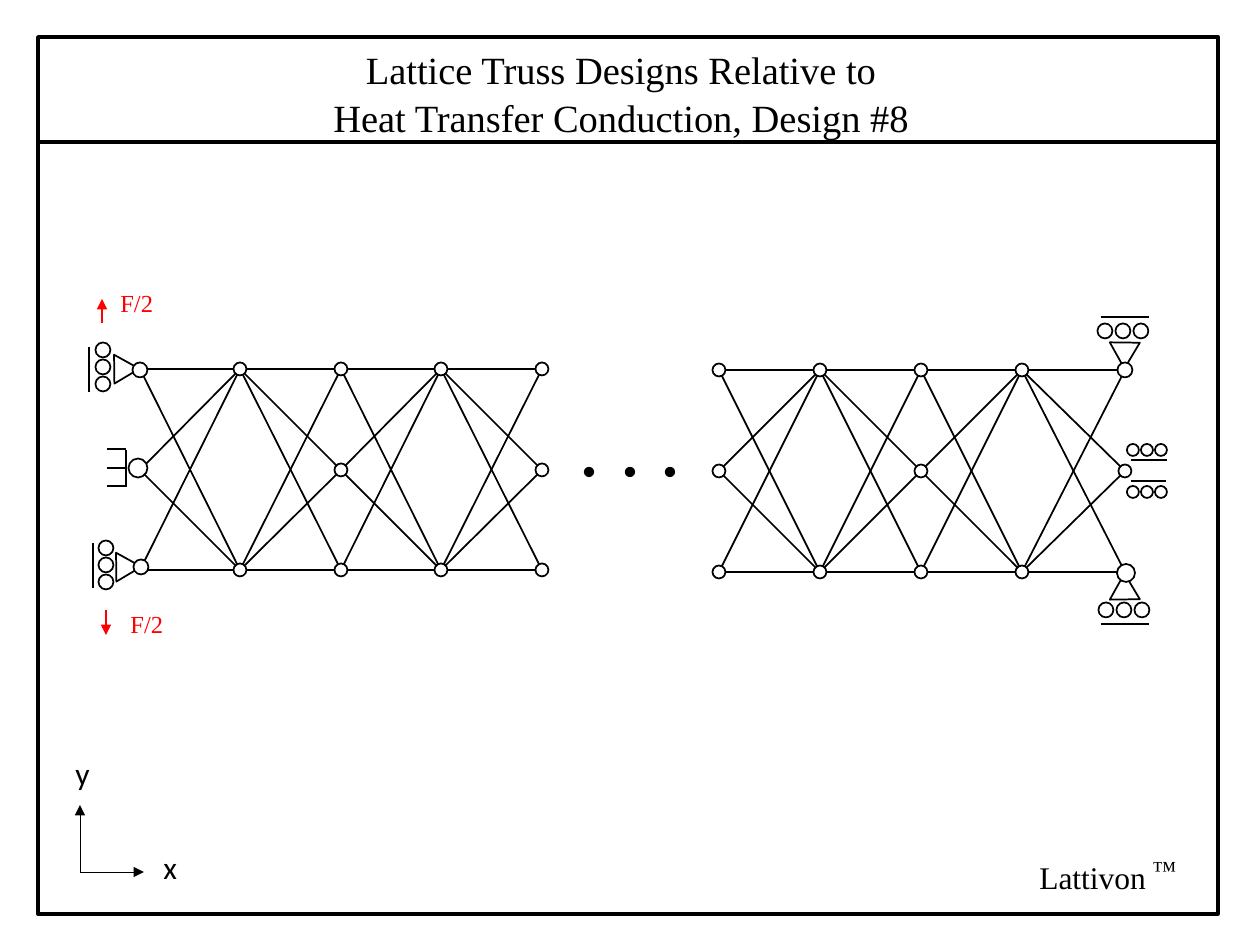
from pptx import Presentation
from pptx import util as u
from pptx.dml.color import RGBColor
from pptx.enum import shapes, text
from pptx.oxml.ns import qn
from lxml import etree

PX = 7257  # EMU in one px, 126 px to the inch
HEX = {"ink": "000000", "paper": "FFFFFF", "force": "FF0000"}
SERIF, SANS = "Times New Roman", "Calibri"

deck = Presentation()
deck.slide_width, deck.slide_height = u.Inches(10), u.Inches(7.5)
slide = deck.slides.add_slide(deck.slide_layouts[5])
items = slide.shapes


def line(x1, y1, x2, y2, color="ink", width=1, arrow=False):
    rod = items.add_connector(shapes.MSO_CONNECTOR.STRAIGHT,
                              x1 * PX, y1 * PX, x2 * PX, y2 * PX)
    rod.line.color.rgb = RGBColor.from_string(HEX[color])
    rod.line.width = u.Pt(width)
    if arrow:
        etree.SubElement(rod.line._ln, qn("a:tailEnd"), type="triangle")
    etree.SubElement(rod._element.spPr, qn("a:effectLst"))


def write(words, box, size, font=SERIF, color="ink", holder=None, wrap=False,
          align=text.PP_ALIGN.LEFT, anchor=text.MSO_ANCHOR.TOP, pitch=None):
    x, y, w, h = (v * PX for v in box)
    holder = holder or items.add_textbox(x, y, w, h)
    holder.left, holder.top, holder.width, holder.height = x, y, w, h
    frame = holder.text_frame
    frame.text = words
    frame.word_wrap = wrap
    frame.auto_size = text.MSO_AUTO_SIZE.NONE
    frame.vertical_anchor = anchor
    for para in frame.paragraphs:
        para.alignment = align
        if pitch:
            para.line_spacing = u.Pt(pitch)
        for run in para.runs:
            run.font.size, run.font.name = u.Pt(size), font
            run.font.color.rgb = RGBColor.from_string(HEX[color])


# Frame and title
frame = items.add_shape(shapes.MSO_SHAPE.RECTANGLE,
                        38 * PX, 37 * PX, 1180 * PX, 877 * PX)
frame.shadow.inherit = False
frame.fill.background()
frame.line.color.rgb = RGBColor.from_string(HEX["ink"])
frame.line.width = u.Pt(2)
line(38, 142, 1218, 142, width=2)
write("Lattice Truss Designs Relative to\nHeat Transfer Conduction, Design #8",
      (300, 33, 642, 118), 22, holder=items.title, wrap=True, pitch=27.5,
      align=text.PP_ALIGN.CENTER, anchor=text.MSO_ANCHOR.MIDDLE)

# Truss members; discs are gathered as (centre x, centre y, size, fill)
discs = []
halves = [((140, 240, 341, 441, 542), (369, 470, 570)),
          ((719, 820, 921, 1022, 1125), (370, 471, 572))]
for cols, (top, mid, low) in halves:
    for a, b in zip(cols, cols[1:]):
        for start, end in ((top, top), (low, low), (top, low), (low, top)):
            line(a, start, b, end)
    for i in (0, 2, 4):
        for j in (i - 1, i + 1):
            if 0 <= j < 5:
                line(cols[i], mid, cols[j], top)
                line(cols[i], mid, cols[j], low)
    for i, x in enumerate(cols):
        for y in (top, low) if i % 2 else (top, mid, low):
            if x not in (140, 1125):
                discs.append((x, y, 13, "paper"))

# End nodes
discs += [(140, 370, 15, "paper"), (138, 468, 19, "paper"),
          (141, 567, 15, "paper"), (1125, 370, 15, "paper"),
          (1125, 471, 13, "paper"), (1126, 573, 18, "paper")]

# Support wedges: left, top, width, height, turn
for x, y, w, h, turn in [(106, 353, 29, 25, 329.2), (108, 551, 29, 25, 329.2),
                         (1106, 336, 30, 26, 300.8), (1106, 580, 30, 26, 239.2)]:
    wedge = items.add_shape(shapes.MSO_SHAPE.ISOSCELES_TRIANGLE,
                            x * PX, y * PX, w * PX, h * PX)
    wedge.rotation = turn
    wedge.shadow.inherit = False
    wedge.fill.background()
    wedge.line.color.rgb = RGBColor.from_string(HEX["ink"])
    wedge.line.width = u.Pt(1)

# Rollers: first centre, step, size
for x, y, dx, dy, size in [(103, 350, 0, 17, 15), (106, 548, 0, 17, 15),
                           (1105, 331, 18, 0, 15), (1106, 610, 18, 0, 15),
                           (1133, 450, 14, 0, 12), (1133, 492, 14, 0, 12)]:
    discs += [(x + k * dx, y + k * dy, size, "paper") for k in range(3)]

# Walls beside the rollers, and the fixed bracket at mid left
for ends in [(89, 347, 89, 392), (93, 543, 93, 588),
             (1101, 317, 1149, 317), (1101, 624, 1149, 624),
             (1131, 460, 1167, 460), (1131, 481, 1166, 481),
             (126, 450, 126, 487)]:
    line(*ends)
for y in (449, 468, 486):
    line(107, y, 126, y)

# Dots for the panels left out
discs += [(x, 472, 9, "ink") for x in (589, 630, 670)]

for x, y, size, fill in discs:
    disc = items.add_shape(shapes.MSO_SHAPE.OVAL, int((x - size / 2) * PX),
                           int((y - size / 2) * PX), size * PX, size * PX)
    disc.shadow.inherit = False
    disc.fill.solid()
    disc.fill.fore_color.rgb = RGBColor.from_string(HEX[fill])
    disc.line.color.rgb = RGBColor.from_string(HEX["ink"])
    disc.line.width = u.Pt(1 if fill == "paper" else 0.75)

# Forces
line(102, 323, 102, 299, color="force", arrow=True)
line(106, 610, 106, 635, color="force", arrow=True)
write("F/2", (108, 282, 62, 43), 14, color="force")
write("F/2", (118, 603, 58, 43), 14, color="force")

# Axes
line(80, 872, 144, 872, width=0.5, arrow=True)
line(80, 872, 80, 805, width=0.5, arrow=True)
write("x", (151, 842, 39, 50), 18, font=SANS)
write("y", (63, 748, 39, 50), 18, font=SANS)

# Product mark
write("Lattivon", (1027, 852, 137, 50), 18)
write("™", (1140, 848, 72, 50), 14)

deck.save("out.pptx")
